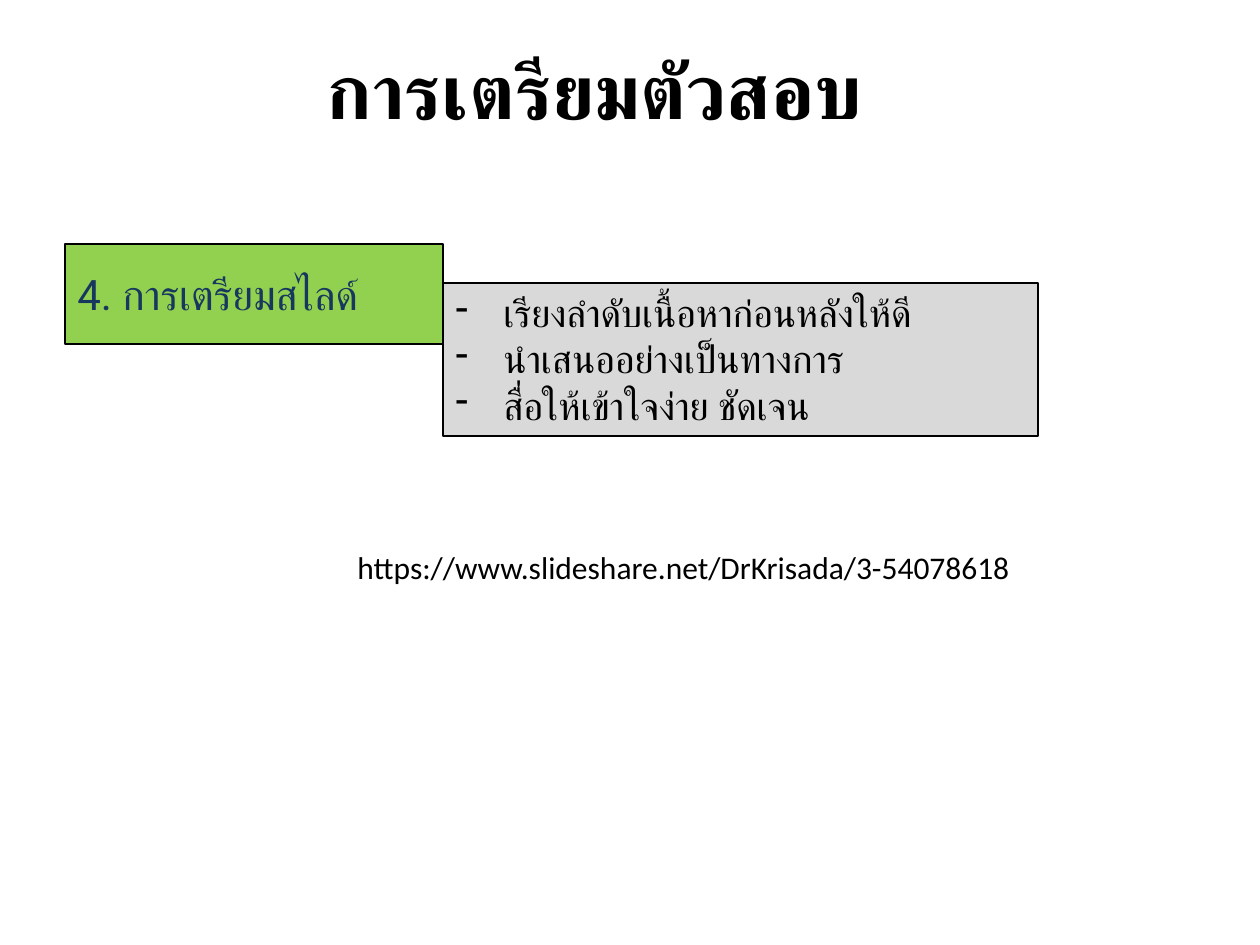
from lxml import etree
from pptx import Presentation
from pptx import util as u
from pptx.dml.color import RGBColor
from pptx.enum import shapes, text
from pptx.oxml.ns import qn

SCALE = 914400 // 126
HUES = {"ink": "000000", "navy": "17375E", "green": "92D050", "grey": "D9D9D9"}
MID = text.MSO_ANCHOR.MIDDLE
TOP = text.MSO_ANCHOR.TOP
LEFT = text.PP_ALIGN.LEFT
MARK = 48


def px(num):
    """Turn px into EMU."""
    return u.Emu(num * SCALE)


def hue(name):
    """Look up a colour by name."""
    return RGBColor.from_string(HUES[name])


def dash(para):
    """Give a paragraph a hanging dash."""
    props = para._p.get_or_add_pPr()
    for key, num in {"marL": MARK, "indent": -MARK}.items():
        props.set(key, str(px(num)))
    etree.SubElement(props, qn("a:buFontTx"))
    etree.SubElement(props, qn("a:buChar")).set("char", "-")


def write(shape, lines, ink="ink", face="Roboto", anchor=TOP, align=LEFT, marks=False, **look):
    """Fill a shape with formatted lines."""
    frame = shape.text_frame
    frame.word_wrap = True
    frame.vertical_anchor = anchor
    for num, line in enumerate(lines):
        para = frame.paragraphs[0] if num == 0 else frame.add_paragraph()
        para.alignment = align
        if marks:
            dash(para)
        run = para.add_run()
        run.text = line
        for key, val in {"name": face, **look}.items():
            setattr(run.font, key, val)
        run.font.color.rgb = hue(ink)
        etree.SubElement(run._r.get_or_add_rPr(), qn("a:cs")).set("typeface", face)


def label(slide, box, line, **look):
    """Place a line of plain text in the box."""
    write(slide.shapes.add_textbox(*map(px, box)), [line], **look)


def panel(slide, box, fill, lines, **look):
    """Place a filled and outlined panel in the box."""
    shape = slide.shapes.add_shape(shapes.MSO_SHAPE.RECTANGLE, *map(px, box))
    shape.shadow.inherit = False
    shape.fill.solid()
    shape.fill.fore_color.rgb = hue(fill)
    shape.line.color.rgb = hue("ink")
    shape.line.width = u.Pt(0.75)
    write(shape, lines, **look)


def topic(slide, box, head, points):
    """Place a heading panel with its points stepped down to the right."""
    left, top, wide, high = box
    side, drop = 378, 39
    panel(slide, (left + side, top + drop, wide - side, high - drop), "grey", points,
          marks=True, size=u.Pt(22))
    panel(slide, (left, top, side, 100), "green", [head],
          ink="navy", anchor=MID, size=u.Pt(24))


def main():
    """Build the slide and save it."""
    deck = Presentation()
    deck.slide_width, deck.slide_height = px(1260), px(945)
    slide = deck.slides.add_slide(deck.slide_layouts[6])
    label(slide, (44, 5, 1101, 168), "การเตรียมตัวสอบ", anchor=MID,
          align=text.PP_ALIGN.CENTER, size=u.Pt(44), bold=True)
    topic(slide, (65, 244, 973, 192), "4. การเตรียมสไลด์", [
        "เรียงลำดับเนื้อหาก่อนหลังให้ดี",
        "นำเสนออย่างเป็นทางการ",
        "สื่อให้เข้าใจง่าย ชัดเจน",
    ])
    label(slide, (345, 542, 867, 50), "https://www.slideshare.net/DrKrisada/3-54078618",
          face="Calibri", size=u.Pt(18))
    deck.save("out.pptx")


if __name__ == "__main__":
    main()
